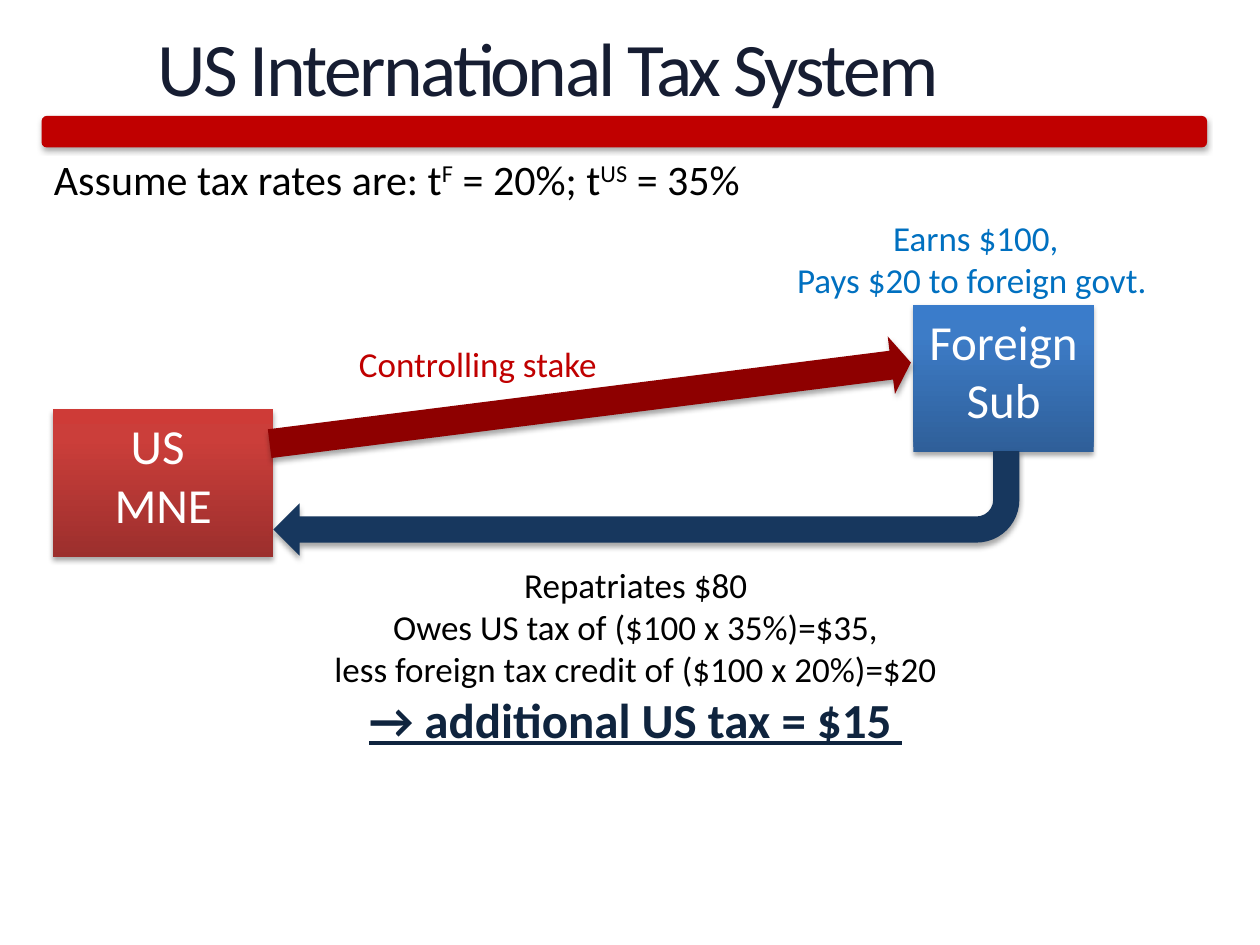
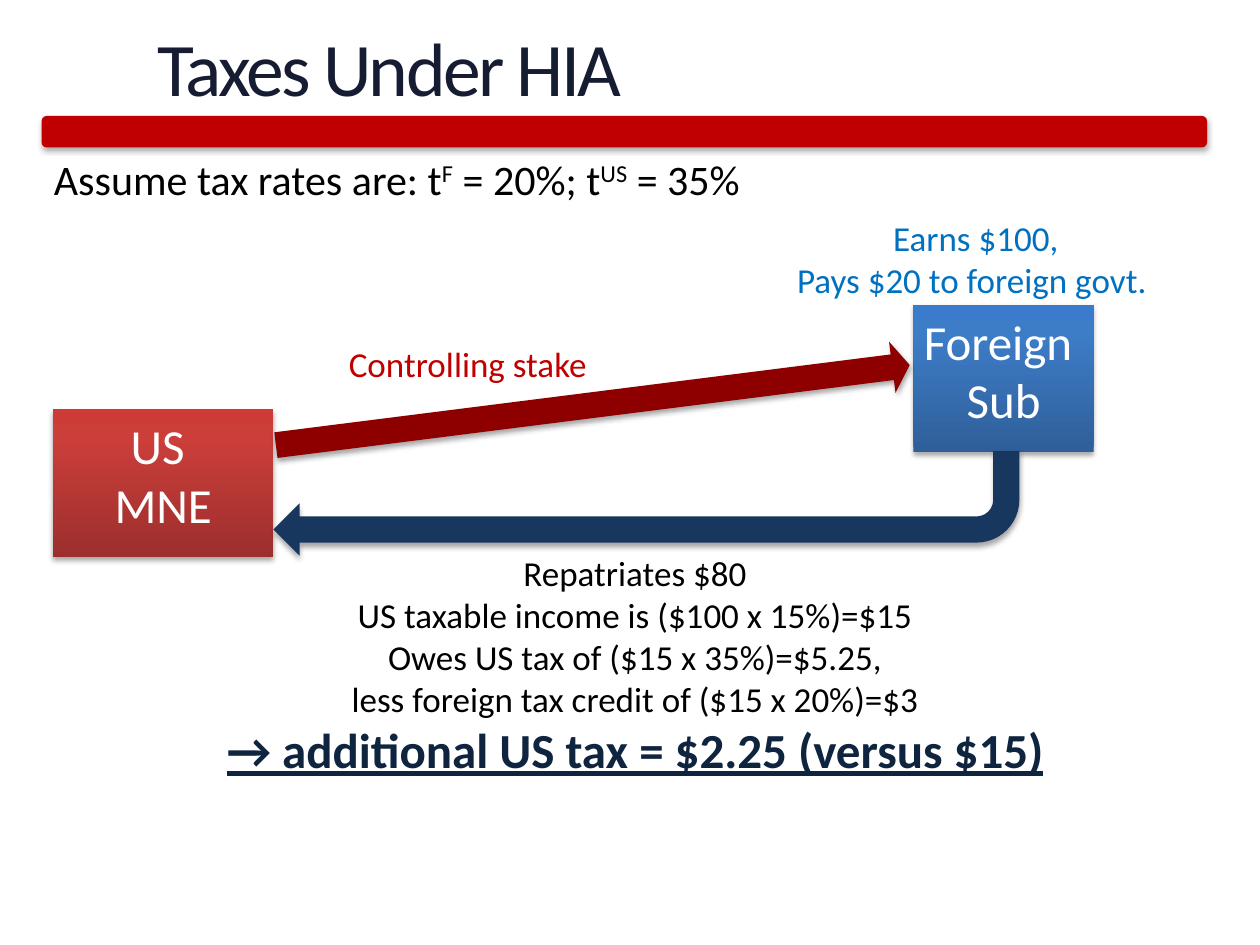
from lxml import etree
from pptx import Presentation
from pptx.dml.color import RGBColor
from pptx.enum.shapes import MSO_SHAPE
from pptx.enum.text import PP_ALIGN
from pptx.oxml.ns import qn
from pptx.util import Inches, Pt

FONT = "Calibri"
TITLE, BAR, BLACK, WHITE = "161D32", "C00000", "000000", "FFFFFF"
EARNINGS, STAKE_ARROW, RETURN_ARROW, RESULT = "0070C0", "8E0000", "17375E", "0F243E"
PARENT_STOPS = [(0, "9C2F2D"), (80, "CB3E3A"), (100, "CE3B37")]
SUBSIDIARY_STOPS = [(0, "2F5F99"), (80, "3D7CC7"), (100, "3A7CCB")]

RAISED = {"baseline": 30}
CONCLUSION = {"size": 28, "color": RESULT, "bold": True, "underline": True}
ASSUMPTION = [["Assume tax rates are: t", ("F", RAISED), " = 20%; t", ("US", RAISED), " = 35%"]]
PARENT = ["US ", "MNE"]
EARNED = ["Earns $100,", "Pays $20 to foreign govt. "]

SLIDES = [
    {
        "title": "US International Tax System",
        "subsidiary": ["Foreign", "Sub"],
        "stake_label": (2.75, 2.67, 3.08, 0.43),
        "stake_arrow": (2.12, 2.97, 5.13, 0.46),
        "tax_box": (2.42, 4.42, 5.25, 1.58),
        "tax": [
            "Repatriates $80",
            "Owes US tax of ($100 x 35%)=$35,",
            "less foreign tax credit of ($100 x 20%)=$20",
            [("→ additional US tax = $15 ", CONCLUSION)],
        ],
    },
    {
        "title": "Taxes Under HIA",
        "subsidiary": ["Foreign ", "Sub"],
        "stake_label": (2.67, 2.67, 3.08, 0.43),
        "stake_arrow": (2.17, 3.01, 5.07, 0.41),
        "tax_box": (1.58, 4.33, 6.92, 1.92),
        "tax": [
            "Repatriates $80",
            "US taxable income is ($100 x 15%)=$15",
            "Owes US tax of ($15 x 35%)=$5.25,",
            "less foreign tax credit of ($15 x 20%)=$3",
            [("→ additional US tax = $2.25 (versus $15)", CONCLUSION)],
        ],
    },
]


def rgb(color):
    return RGBColor.from_string(color)


def add_node(parent, tag, **attributes):
    values = {name: str(value) for name, value in attributes.items()}
    return etree.SubElement(parent, qn(tag), values)


def format_span(span, size, color, bold=None, underline=None, baseline=0, spacing=0):
    font = span.font
    font.name, font.size, font.color.rgb = FONT, Pt(size), rgb(color)
    font.bold, font.underline = bold, underline
    properties = font._element
    if baseline:
        properties.set("baseline", str(baseline * 1000))
    if spacing:
        properties.set("spc", str(round(spacing * 100)))


def write(frame, paragraphs, align=PP_ALIGN.LEFT, line_spacing=None, **style):
    """Fill a text frame; a paragraph is a string or a list of strings and (text, style) pairs."""
    for index, content in enumerate(paragraphs):
        para = frame.paragraphs[0] if index == 0 else frame.add_paragraph()
        para.alignment, para.line_spacing = align, line_spacing
        for part in [content] if isinstance(content, str) else content:
            words, changes = (part, {}) if isinstance(part, str) else part
            span = para.add_run()
            span.text = words
            format_span(span, **{**style, **changes})


def add_text(page, place, paragraphs, inset=None, **style):
    frame = page.shapes.add_textbox(*map(Inches, place)).text_frame
    frame.word_wrap = True
    if inset is not None:
        frame.margin_left = frame.margin_top = frame.margin_right = frame.margin_bottom = Inches(inset)
    write(frame, paragraphs, **style)


def set_gradient(shape, stops):
    """Fill upwards, from the first stop at the bottom to the last at the top."""
    shape.fill.gradient()
    shape.fill.gradient_angle = 90
    stop_list = shape._element.spPr.find(qn("a:gradFill")).find(qn("a:gsLst"))
    for old_stop in list(stop_list):
        stop_list.remove(old_stop)
    for position, color in stops:
        stop = add_node(stop_list, "a:gs", pos=position * 1000)
        add_node(stop, "a:srgbClr", val=color)


def add_shadow(shape):
    shape.shadow.inherit = False
    effects = shape._element.spPr.find(qn("a:effectLst"))
    shadow = add_node(effects, "a:outerShdw", blurRad=Pt(3.1), dist=Pt(1.8),
                      dir=90 * 60000, rotWithShape=0)
    add_node(add_node(shadow, "a:srgbClr", val=BLACK), "a:alpha", val=35000)


def add_figure(page, kind, place, fill, rotation=0, adjustments=()):
    """Add a shadowed shape; fill is one colour or a list of gradient stops."""
    shape = page.shapes.add_shape(kind, *map(Inches, place))
    if isinstance(fill, str):
        shape.fill.solid()
        shape.fill.fore_color.rgb = rgb(fill)
    else:
        set_gradient(shape, fill)
    shape.line.fill.background()
    add_shadow(shape)
    shape.rotation = rotation
    for index, value in enumerate(adjustments):
        shape.adjustments[index] = value
    return shape


def add_company(page, place, stops, name):
    frame = add_figure(page, MSO_SHAPE.RECTANGLE, place, stops).text_frame
    frame.word_wrap = False
    frame.vertical_anchor = 1
    write(frame, name, align=PP_ALIGN.CENTER, size=28, color=WHITE)


def add_heading(page, title):
    add_figure(page, MSO_SHAPE.ROUNDED_RECTANGLE, (0.33, 0.92, 9.25, 0.25), BAR)
    add_text(page, (1.25, 0.25, 8.33, 0.66), [title], inset=0, line_spacing=0.9,
             size=43.2, color=TITLE, spacing=-1.5)


def add_tax_slide(deck, content):
    page = deck.slides.add_slide(deck.slide_layouts[6])
    add_heading(page, content["title"])
    add_company(page, (0.42, 3.25, 1.75, 1.17), PARENT_STOPS, PARENT)
    add_company(page, (7.25, 2.42, 1.43, 1.17), SUBSIDIARY_STOPS, content["subsidiary"])
    add_text(page, content["tax_box"], content["tax"], align=PP_ALIGN.CENTER, size=20, color=BLACK)
    add_text(page, (6.08, 1.67, 3.33, 0.77), EARNED, align=PP_ALIGN.CENTER, size=20, color=EARNINGS)
    add_text(page, content["stake_label"], ["Controlling stake"], size=20, color=BAR)
    add_text(page, (0.33, 1.17, 9.33, 0.67), ASSUMPTION, size=24, color=BLACK)
    add_figure(page, MSO_SHAPE.RIGHT_ARROW, content["stake_arrow"], STAKE_ARROW,
               rotation=352.8, adjustments=(0.5, 0.34))
    add_figure(page, MSO_SHAPE.BENT_ARROW, (2.17, 3.58, 5.92, 0.83), RETURN_ARROW,
               rotation=180, adjustments=(0.25, 0.25, 0.25, 0.41))


def main():
    deck = Presentation()
    deck.slide_width, deck.slide_height = Inches(10), Inches(7.5)
    for content in SLIDES:
        add_tax_slide(deck, content)
    deck.save("out.pptx")


if __name__ == "__main__":
    main()
